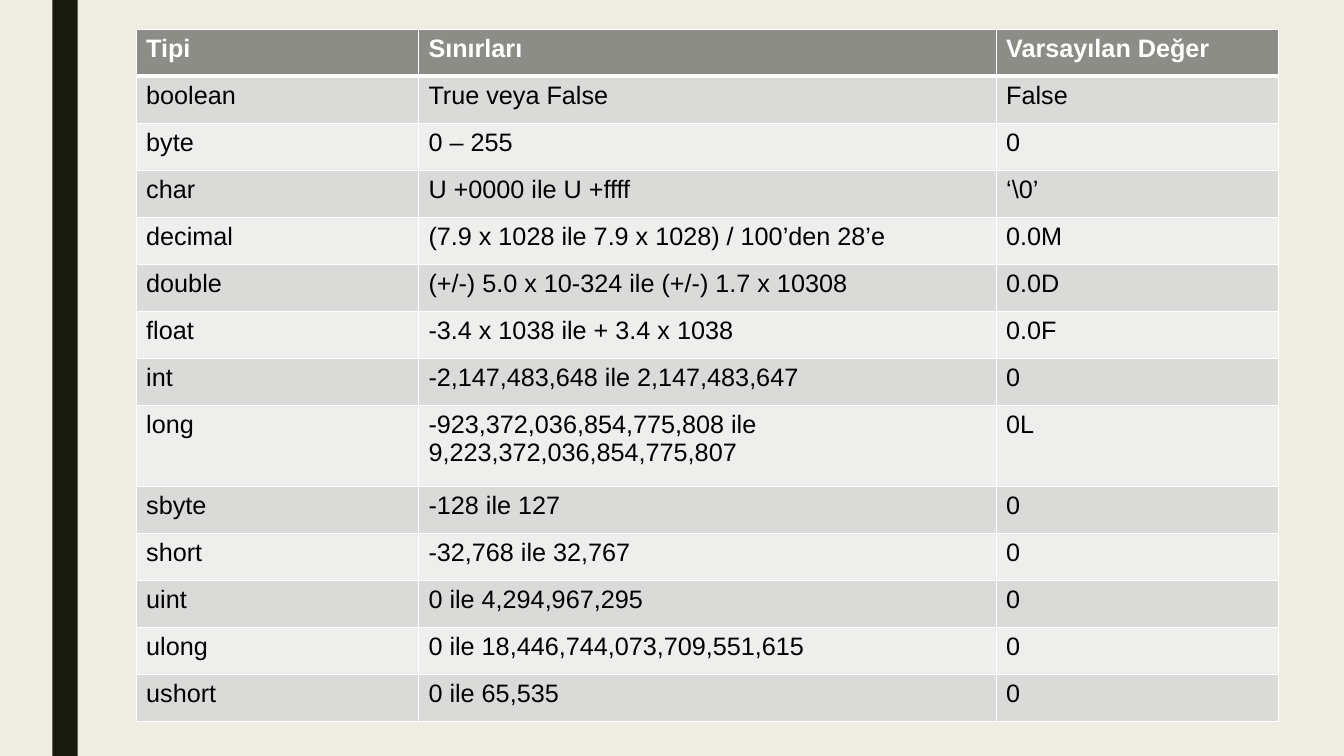
from lxml import etree
from pptx import Presentation
from pptx.dml.color import RGBColor
from pptx.enum.shapes import MSO_SHAPE
from pptx.oxml.ns import qn
from pptx.util import Inches, Pt

RECTANGLE = MSO_SHAPE.RECTANGLE
BLANK_LAYOUT = 6
FONT = "Arial"
COLORS = {
    "background": "EFEDE3",
    "stripe": "191B0E",
    "header": "8C8D86",
    "odd_row": "DADBD9",
    "even_row": "EEEEED",
    "border": "FFFFFF",
    "header_text": "FFFFFF",
    "body_text": "000000",
}

COLUMN_WIDTHS = [2.8, 5.73, 2.8]
LONG_ROW_HEIGHT = 0.8
TYPE_ROWS = [
    ("Tipi", "Sınırları", "Varsayılan Değer"),
    ("boolean", "True veya False", "False"),
    ("byte", "0 – 255", "0"),
    ("char", "U +0000 ile U +ffff", "‘\\0’"),
    ("decimal", "(7.9 x 1028 ile 7.9 x 1028) / 100’den 28’e", "0.0M"),
    ("double", "(+/-) 5.0 x 10-324 ile (+/-) 1.7 x 10308", "0.0D"),
    ("float", "-3.4 x 1038 ile + 3.4 x 1038", "0.0F"),
    ("int", "-2,147,483,648 ile 2,147,483,647", "0"),
    ("long", "-923,372,036,854,775,808 ile 9,223,372,036,854,775,807", "0L"),
    ("sbyte", "-128 ile 127", "0"),
    ("short", "-32,768 ile 32,767", "0"),
    ("uint", "0 ile 4,294,967,295", "0"),
    ("ulong", "0 ile 18,446,744,073,709,551,615", "0"),
    ("ushort", "0 ile 65,535", "0"),
]


def rgb(name):
    return RGBColor.from_string(COLORS[name])


def add_stripe(slide, left, top, width, height):
    stripe = slide.shapes.add_shape(
        RECTANGLE, Inches(left), Inches(top), Inches(width), Inches(height))
    stripe.shadow.inherit = False
    stripe.fill.solid()
    stripe.fill.fore_color.rgb = rgb("stripe")
    stripe.line.fill.background()


def set_borders(cell, widths):
    """Draw the left, right, top and bottom borders, widths in points."""
    properties = cell._tc.get_or_add_tcPr()
    for side, width in zip("LRTB", widths):
        line = etree.SubElement(properties, qn(f"a:ln{side}"), w=str(Pt(width)))
        fill = etree.SubElement(line, qn("a:solidFill"))
        etree.SubElement(fill, qn("a:srgbClr"), val=COLORS["border"])


def format_cell(cell, text, row_index):
    is_header = row_index == 0
    # A thick rule separates the header from the body
    top = 3 if row_index == 1 else 1
    bottom = 3 if is_header else 1
    set_borders(cell, (1, 1, top, bottom))

    band = "header" if is_header else "odd_row" if row_index % 2 else "even_row"
    cell.fill.solid()
    cell.fill.fore_color.rgb = rgb(band)

    cell.text_frame.text = text
    font = cell.text_frame.paragraphs[0].runs[0].font
    font.name = FONT
    font.size = Pt(18)
    font.bold = is_header
    font.color.rgb = rgb("header_text" if is_header else "body_text")


def add_type_table(slide, left, top, width, height):
    type_table = slide.shapes.add_table(
        len(TYPE_ROWS), len(COLUMN_WIDTHS),
        Inches(left), Inches(top), Inches(width), Inches(height)).table
    for column, column_width in zip(type_table.columns, COLUMN_WIDTHS):
        column.width = Inches(column_width)

    # All rows share the height left over by the two-line row
    row_height = (height - LONG_ROW_HEIGHT) / (len(TYPE_ROWS) - 1)
    for row_index, values in enumerate(TYPE_ROWS):
        is_long = values[0] == "long"
        type_table.rows[row_index].height = Inches(
            LONG_ROW_HEIGHT if is_long else row_height)
        for column_index, value in enumerate(values):
            format_cell(type_table.cell(row_index, column_index), value, row_index)


def main():
    presentation = Presentation()
    presentation.slide_width = Inches(13.33)
    presentation.slide_height = Inches(7.5)
    slide = presentation.slides.add_slide(presentation.slide_layouts[BLANK_LAYOUT])
    slide.background.fill.solid()
    slide.background.fill.fore_color.rgb = rgb("background")

    # Dark stripe along the left edge, then the table of data types
    add_stripe(slide, 0.52, 0, 0.25, 7.5)
    add_type_table(slide, 1.35, 0.29, sum(COLUMN_WIDTHS), 6.87)
    presentation.save("out.pptx")


if __name__ == "__main__":
    main()
